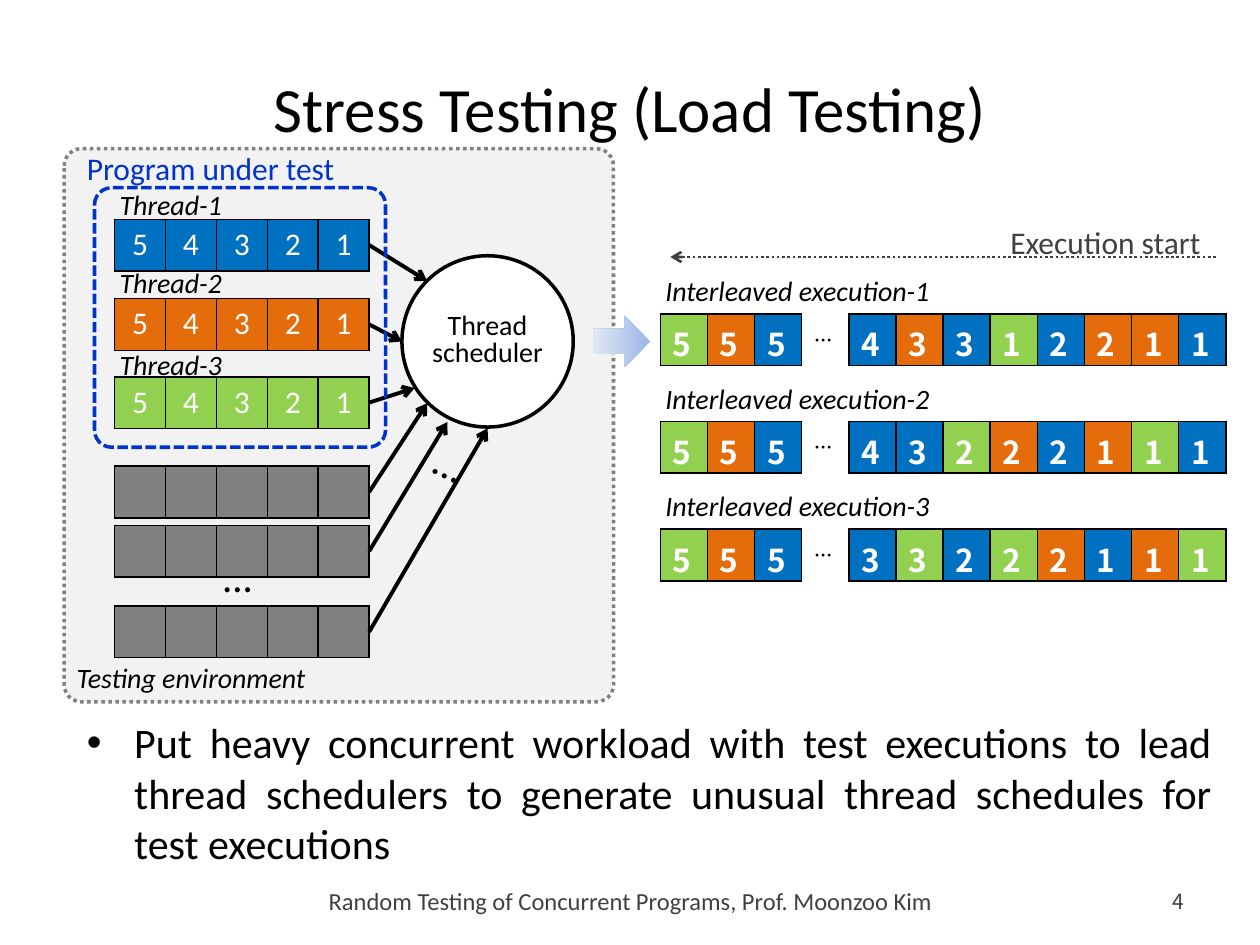
from dataclasses import dataclass

from lxml import etree
from pptx import Presentation
from pptx import util as u
from pptx.dml.color import RGBColor
from pptx.enum import dml, shapes, text
from pptx.oxml import ns


@dataclass(frozen=True)
class Theme:
    """Colours, type sizes and fonts of the deck."""
    black: str = "000000"
    white: str = "FFFFFF"
    dark: str = "404040"
    gray: str = "808080"
    panel: str = "F2F2F2"
    accent: str = "0033CC"
    blue: str = "0070C0"
    orange: str = "E46C0A"
    green: str = "92D050"
    arrow_from: str = "9AB5E4"
    arrow_to: str = "E1E8F5"
    title: int = 36
    body: int = 24
    label: int = 18
    caption: int = 16
    footer: int = 14
    number: int = 12
    font: str = "Calibri"
    cjk: str = "Noto Sans CJK KR"


THEME = Theme()
ALIGN = text.PP_ALIGN
MIDDLE = text.MSO_ANCHOR.MIDDLE
THREAD_COLORS = {"B": THEME.blue, "O": THEME.orange, "G": THEME.green, " ": THEME.white}


def inches(*values):
    """Turn numbers into lengths."""
    return [u.Inches(value) for value in values]


def write(frame, content, size=THEME.caption, color=THEME.black, font=THEME.font, bold=False,
          italic=False, align=None, anchor=None, spacing=None, baseline=0):
    """Fill a text frame with one paragraph per line of content."""
    if anchor is not None:
        frame.vertical_anchor = anchor
    for index, line in enumerate(content.split("\n")):
        para = frame.add_paragraph() if index else frame.paragraphs[0]
        para.alignment, para.line_spacing = align, spacing
        span = para.add_run()
        span.text = line
        span.font.size, span.font.name = u.Pt(size), font
        span.font.bold, span.font.italic = bold, italic
        span.font.color.rgb = RGBColor.from_string(color)
        if baseline:
            span._r.get_or_add_rPr().set("baseline", str(baseline * 1000))


def add_text(page, box, content, inset=0.1, rotation=0, **style):
    """Place a wrapping text box."""
    label = page.shapes.add_textbox(*inches(*box))
    label.rotation = rotation
    label.text_frame.word_wrap = True
    label.text_frame.margin_left = u.Inches(inset)
    write(label.text_frame, content, **style)


def add_outline(page, kind, box, line, width=2, dash=None, fill=None, radius=None):
    """Place a preset shape with a line and an optional fill."""
    shape = page.shapes.add_shape(kind, *inches(*box))
    shape.shadow.inherit = False
    if radius is not None:
        shape.adjustments[0] = radius
    if fill:
        shape.fill.solid()
        shape.fill.fore_color.rgb = RGBColor.from_string(fill)
    else:
        shape.fill.background()
    shape.line.color.rgb = RGBColor.from_string(line)
    shape.line.width, shape.line.dash_style = u.Pt(width), dash
    return shape


def add_arrow(page, start, end, color=THEME.black, width=2.25, dash=None):
    """Draw a straight line with an open arrowhead at its end."""
    arrow = page.shapes.add_connector(shapes.MSO_CONNECTOR.STRAIGHT, *inches(*start, *end))
    arrow.line.color.rgb = RGBColor.from_string(color)
    arrow.line.width, arrow.line.dash_style = u.Pt(width), dash
    etree.SubElement(arrow.line._get_or_add_ln(), ns.qn("a:tailEnd"), type="arrow")
    etree.SubElement(arrow._element.spPr, ns.qn("a:effectLst"))


def set_borders(cell, sides):
    """Draw thin black lines on the named sides of a cell and none on the others."""
    for index, side in enumerate("LRTB"):
        line = etree.Element(ns.qn("a:ln" + side), w=str(u.Pt(1)))
        if side in sides:
            fill = etree.SubElement(line, ns.qn("a:solidFill"))
            etree.SubElement(fill, ns.qn("a:srgbClr"), val=THEME.black)
        else:
            etree.SubElement(line, ns.qn("a:noFill"))
        cell._tc.get_or_add_tcPr().insert(index, line)


def add_queue(page, box, steps, colors, bottom=0.05, **style):
    """Place a one-row table of coloured steps, with a gap at each ellipsis."""
    table = page.shapes.add_table(1, len(steps), *inches(*box)).table
    table.first_row = table.horz_banding = False
    for column, step, color in zip(table.columns, steps, colors):
        column.width = u.Inches(box[2] / len(steps))
    for cell, step, color in zip(table.rows[0].cells, steps, colors):
        cell.fill.solid()
        cell.fill.fore_color.rgb = RGBColor.from_string(color)
        cell.margin_bottom = u.Inches(bottom)
        gap = step == "…"
        set_borders(cell, "LR" if gap else "LRTB")
        if gap:
            cell.vertical_anchor = MIDDLE
        if step.strip():
            write(cell.text_frame, step, size=THEME.label, baseline=30 if gap else 0,
                  color=THEME.black if gap else THEME.white, **style)


def add_environment(page, left, top, width, height):
    """Draw the testing environment with its threads, load and scheduler."""
    rounded = shapes.MSO_SHAPE.ROUNDED_RECTANGLE
    add_outline(page, rounded, (left, top, width, height), THEME.gray,
                dash=dml.MSO_LINE.ROUND_DOT, fill=THEME.panel, radius=0.031)
    queue_left, queue_width, queue_height = left + 0.4, 2.02, 0.41
    scheduler = add_outline(page, shapes.MSO_SHAPE.OVAL, (left + 2.68, top + 0.85, 1.36, 1.36),
                            THEME.black, fill=THEME.white)
    frame = scheduler.text_frame
    frame.margin_left = frame.margin_right = frame.margin_top = frame.margin_bottom = 0
    write(frame, "Thread\nscheduler", align=ALIGN.CENTER, anchor=MIDDLE, spacing=0.8)

    threads = [(0.56, 0.26, THEME.blue), (1.19, 0.88, THEME.orange), (1.81, 1.53, THEME.green)]
    for number, (offset, label, color) in enumerate(threads, 1):
        add_queue(page, (queue_left, top + offset, queue_width, queue_height), "54321",
                  [color] * 5, align=ALIGN.CENTER)
        add_text(page, (queue_left, top + label, 1.34, 0.37), f"Thread-{number}",
                 inset=0.04, italic=True)
    loads = [2.52, 2.99, 3.63]
    for offset in loads:
        add_queue(page, (queue_left, top + offset, queue_width, queue_height), " " * 5,
                  [THEME.gray] * 5)

    tips = [(2.88, 1.05), (2.68, 1.53), (2.78, 1.9), (2.88, 2.02), (3.04, 2.17), (3.36, 2.22)]
    for offset, (x, y) in zip([thread[0] for thread in threads] + loads, tips):
        add_arrow(page, (queue_left + queue_width, top + offset + queue_height / 2),
                  (left + x, top + y))
    dots = dict(inset=0.04, size=THEME.body, italic=True, align=ALIGN.CENTER)
    add_text(page, (queue_left, top + 3.14, queue_width, 0.38), "…", **dots)
    add_text(page, (left + 2.77, top + 2.27, 0.71, 0.38), "…", rotation=25.4, **dots)
    add_outline(page, rounded, (left + 0.24, top + 0.31, 2.31, 2.06), THEME.accent,
                dash=dml.MSO_LINE.SQUARE_DOT, radius=0.066)
    add_text(page, (left + 0.08, top - 0.05, 2.31, 0.4), "Program under test",
             size=THEME.label, color=THEME.accent)
    add_text(page, (left, top + 4.01, 2.64, 0.37), "Testing environment", italic=True)


def add_flow_arrow(page, *box):
    """Draw the shaded arrow from the environment to the executions."""
    arrow = page.shapes.add_shape(shapes.MSO_SHAPE.RIGHT_ARROW, *inches(*box))
    arrow.shadow.inherit = False
    arrow.line.fill.background()
    arrow.fill.gradient()
    arrow.fill.gradient_angle = 180
    for stop, color in zip(arrow.fill.gradient_stops, (THEME.arrow_from, THEME.arrow_to)):
        stop.color.rgb = RGBColor.from_string(color)


def add_executions(page, left, top, width):
    """Draw the time arrow and the three interleaved executions."""
    add_arrow(page, (left + width - 0.08, top + 0.32), (left + 0.08, top + 0.32),
              THEME.dark, 1.5, dml.MSO_LINE.ROUND_DOT)
    add_text(page, (left + width - 1.81, top, 1.81, 0.4), "Execution start",
             size=THEME.label, color=THEME.dark)
    runs = [("555…43312211", "GOB BOBGBOOB", 0.05),
            ("555…43222111", "GOB BBGOBOGB", 0),
            ("555…33222111", "GOB BGBGOBOG", 0)]
    for index, (steps, owners, bottom) in enumerate(runs):
        y = top + 0.4 + 0.855 * index
        add_text(page, (left, y, 3.15, 0.37), f"Interleaved execution-{index + 1}",
                 inset=0.04, italic=True)
        add_queue(page, (left, y + 0.37, width, 0.41), steps,
                  [THREAD_COLORS[owner] for owner in owners], bottom,
                  font=THEME.cjk, bold=True)


def fill_placeholder(holder, box, content, **style):
    """Move a placeholder and write its text."""
    holder.left, holder.top, holder.width, holder.height = inches(*box)
    write(holder.text_frame, content, **style)


def add_footer(page, top):
    """Write the course name and the page number."""
    add_text(page, (1.61, top, 6.79, 0.4), "Random Testing of Concurrent Programs, Prof. Moonzoo Kim",
             size=THEME.footer, color=THEME.dark, align=ALIGN.CENTER, anchor=MIDDLE)
    add_text(page, (8.94, top, 0.56, 0.4), "4", size=THEME.number, color=THEME.dark,
             font=THEME.cjk, align=ALIGN.RIGHT, anchor=MIDDLE)


def main():
    """Build the deck and save it."""
    deck = Presentation()
    deck.slide_width, deck.slide_height = inches(10, 7.5)
    page = deck.slides.add_slide(deck.slide_layouts[1])
    fill_placeholder(page.shapes.title, (0.05, 0.39, 9.9, 0.92), "Stress Testing (Load Testing)",
                     size=THEME.title, align=ALIGN.CENTER, anchor=MIDDLE)
    fill_placeholder(page.placeholders[1], (0.59, 5.64, 9.13, 1.26),
                     "Put heavy concurrent workload with test executions to lead thread schedulers "
                     "to generate unusual thread schedules for test executions",
                     size=THEME.body, align=ALIGN.JUSTIFY)
    add_environment(page, 0.51, 1.18, 4.36, 4.39)
    add_flow_arrow(page, 4.71, 2.51, 0.45, 0.4)
    add_executions(page, 5.24, 1.72, 4.49)
    add_footer(page, 6.95)
    deck.save("out.pptx")


if __name__ == "__main__":
    main()
